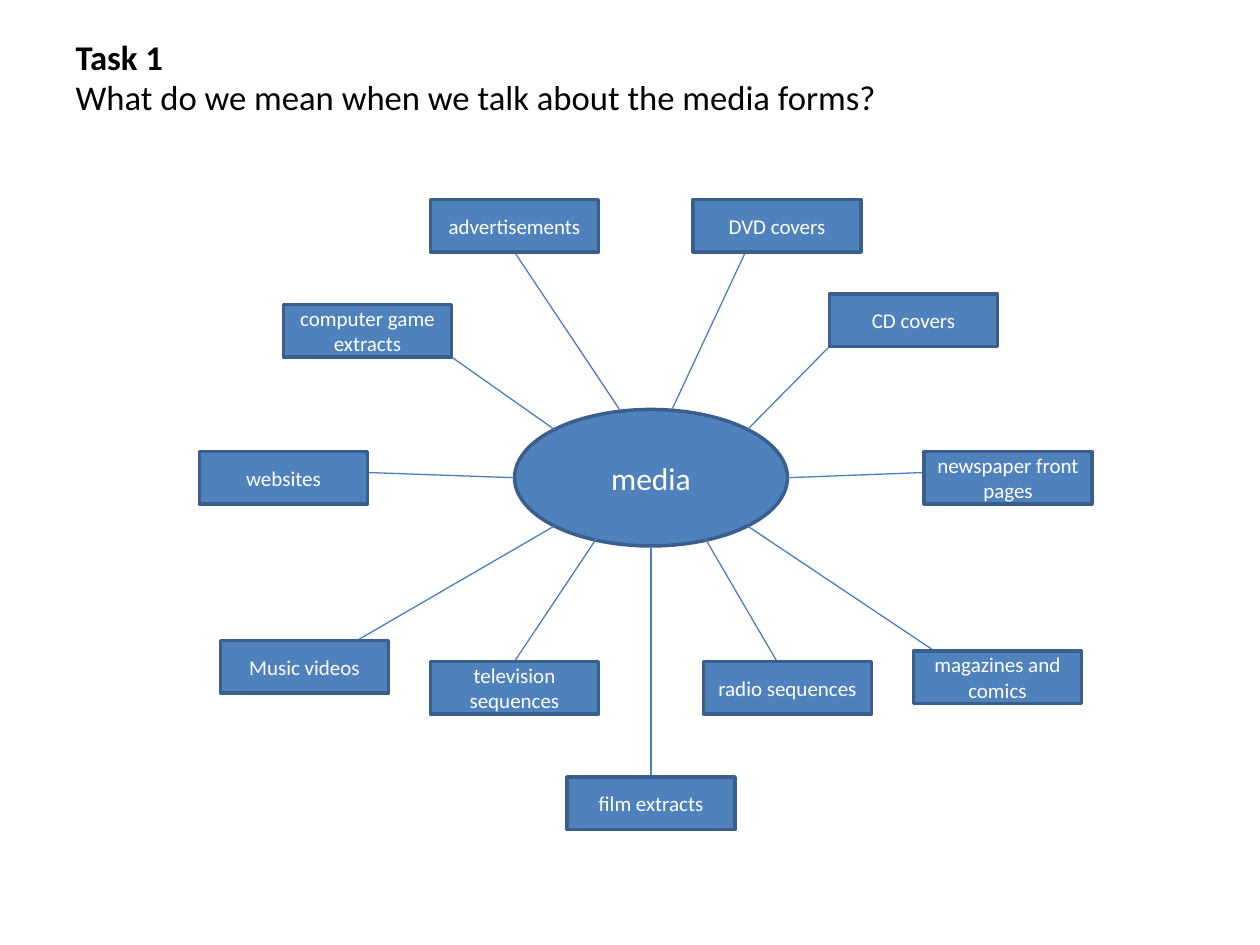
from dataclasses import dataclass

from lxml.etree import SubElement
from pptx import Presentation
from pptx.dml.color import RGBColor
from pptx.enum.shapes import MSO_CONNECTOR, MSO_SHAPE
from pptx.enum.text import MSO_ANCHOR, PP_ALIGN
from pptx.oxml.ns import qn
from pptx.util import Pt

PX = 7620  # EMU; 120 px to the inch
SLIDE_W, SLIDE_H = 1200, 900
BOX_W, BOX_H = 160, 50
HUB_W, HUB_H = 260, 130


@dataclass(frozen=True)
class Theme:
    font: str = "Calibri"
    ink: RGBColor = RGBColor(0, 0, 0)
    white: RGBColor = RGBColor(255, 255, 255)
    fill: RGBColor = RGBColor(0x4F, 0x81, 0xBD)
    border: RGBColor = RGBColor(0x3A, 0x5F, 0x8C)
    spoke: RGBColor = RGBColor(0x4B, 0x7E, 0xBC)
    title_pt: float = 19.8
    hub_pt: float = 18
    box_pt: float = 12
    border_pt: float = 2
    spoke_pt: float = 0.75


THEME = Theme()

# Relative to the hub's centre: label, box corner, spoke start.
# The spoke's end is relative to its box; a side number joins it there.
FORMS = [
    ("computer game extracts", (-350, -165), (-92, -46), (160, 50), None),
    ("advertisements", (-210, -265), (-30, -65), (80, 50), 2),
    ("CD covers", (170, -175), (92, -46), (0, 50), None),
    ("websites", (-430, -25), (-130, 0), (160, 20), None),
    ("newspaper front pages", (260, -25), (130, 0), (0, 20), None),
    ("Music videos", (-410, 155), (-92, 46), (130, 0), None),
    ("film extracts", (-80, 285), (0, 65), (80, 0), 0),
    ("magazines and comics", (250, 165), (92, 46), (20, 0), None),
    ("television sequences", (-210, 175), (-50, 55), (80, 0), 0),
    ("radio sequences", (50, 175), (50, 55), (70, 0), None),
    ("DVD covers", (40, -265), (20, -65), (50, 50), None),
]


def emu(*lengths):
    return [n * PX for n in lengths]


def style_run(r, size, color, bold=False):
    r.font.name = THEME.font
    r.font.size = Pt(size)
    r.font.color.rgb = color
    r.font.bold = bold


def add_title(s, box):
    title = s.shapes.title
    title.left, title.top, title.width, title.height = emu(*box)
    tf = title.text_frame
    tf.word_wrap = True
    tf.vertical_anchor = MSO_ANCHOR.TOP
    tf.margin_top = 0
    tf.text = "Task 1\vWhat do we mean when we talk about the media forms?"
    p = tf.paragraphs[0]
    p.alignment = PP_ALIGN.LEFT
    p.line_spacing = 0.97
    heading, question = p.runs
    style_run(heading, THEME.title_pt, THEME.ink, bold=True)
    style_run(question, THEME.title_pt, THEME.ink)


def add_node(s, kind, box, label, size):
    sp = s.shapes.add_shape(kind, *emu(*box))
    sp.shadow.inherit = False
    sp.fill.solid()
    sp.fill.fore_color.rgb = THEME.fill
    sp.line.color.rgb = THEME.border
    sp.line.width = Pt(THEME.border_pt)
    sp.text_frame.text = label
    p = sp.text_frame.paragraphs[0]
    p.alignment = PP_ALIGN.CENTER
    style_run(p.runs[0], size, THEME.white)
    return sp


def add_spoke(s, start, end):
    line = s.shapes.add_connector(MSO_CONNECTOR.STRAIGHT, *emu(*start, *end))
    line.line.color.rgb = THEME.spoke
    line.line.width = Pt(THEME.spoke_pt)
    SubElement(line._element.spPr, qn("a:effectLst"))
    return line


def add_mind_map(s, cx, cy):
    """Draw the hub centred on (cx, cy) with a box at the end of each spoke."""
    hub = (cx - HUB_W // 2, cy - HUB_H // 2, HUB_W, HUB_H)
    add_node(s, MSO_SHAPE.OVAL, hub, "media", THEME.hub_pt)
    for label, (dx, dy), (sx, sy), (ex, ey), side in FORMS:
        x, y = cx + dx, cy + dy
        spoke = add_spoke(s, (cx + sx, cy + sy), (x + ex, y + ey))
        box = add_node(s, MSO_SHAPE.RECTANGLE, (x, y, BOX_W, BOX_H), label, THEME.box_pt)
        if side is not None:
            spoke.end_connect(box, side)


def main():
    prs = Presentation()
    prs.slide_width, prs.slide_height = emu(SLIDE_W, SLIDE_H)
    s = prs.slides.add_slide(prs.slide_layouts[5])
    add_title(s, (60, 36, 1080, 194))
    add_mind_map(s, 620, 455)
    prs.save("out.pptx")


if __name__ == "__main__":
    main()
